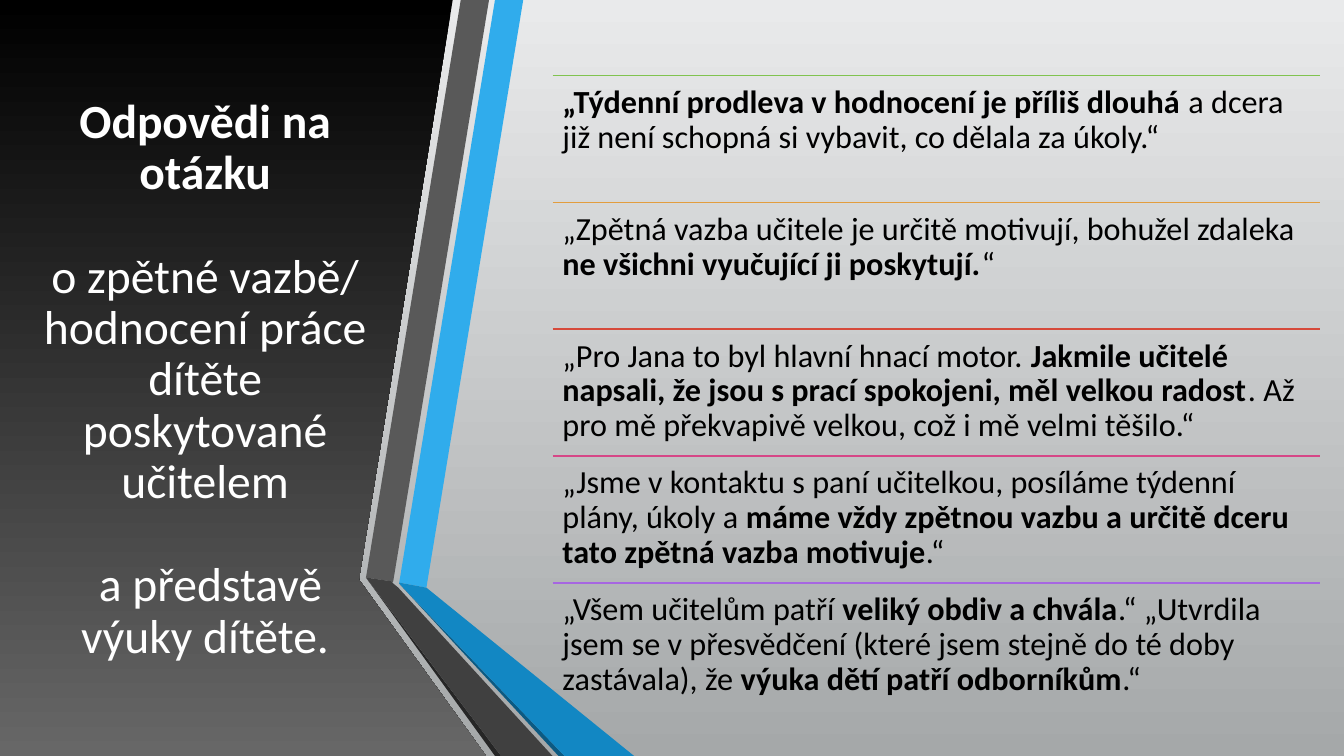
from lxml import etree
from pptx import Presentation
from pptx.dml.color import RGBColor
from pptx.enum.shapes import MSO_CONNECTOR
from pptx.enum.text import MSO_ANCHOR, PP_ALIGN
from pptx.oxml.ns import qn
from pptx.util import Inches, Pt

STRAIGHT = MSO_CONNECTOR.STRAIGHT
TOP, MIDDLE = MSO_ANCHOR.TOP, MSO_ANCHOR.MIDDLE
LEFT, CENTER = PP_ALIGN.LEFT, PP_ALIGN.CENTER

PANEL = [(0, 0), (4.49, 0), (3.56, 5.75), (4.82, 7.5), (0, 7.5)]
RIBBONS = [
    ("30ACEC", [(3.96, 5.78), (4.23, 5.83), (5.19, 0), (4.91, 0)]),
    ("595959", [(4.85, 0), (4.57, 0), (3.63, 5.73), (3.9, 5.77)]),
    ("262626", [(3.63, 5.73), (4.91, 7.5), (4.97, 7.5)]),
    ("0C5A82", [(3.96, 5.79), (5.54, 7.5), (5.6, 7.5)]),
    ("1287C3", [(3.96, 5.79), (5.6, 7.5), (6.29, 7.5), (4.23, 5.83), (3.96, 5.78)]),
    ("404040", [(5.48, 7.5), (3.95, 5.83), (3.89, 5.78), (3.9, 5.77),
                (3.63, 5.73), (4.97, 7.5)]),
]
TITLE = [
    "*Odpovědi na otázku*",
    "o zpětné vazbě/ hodnocení práce dítěte poskytované učitelem",
    " a představě výuky dítěte.",
]
QUOTES = [
    ("80C34F", "*„Týdenní prodleva v hodnocení je příliš dlouhá *a dcera již není "
               "schopná si vybavit, co dělala za úkoly.“"),
    ("E29D3E", "„Zpětná vazba učitele je určitě motivují, bohužel zdaleka "
               "*ne všichni vyučující ji poskytují.*“"),
    ("D64A3B", "„Pro Jana to byl hlavní hnací motor. *Jakmile učitelé napsali, že jsou "
               "s prací spokojeni, měl velkou radost*. Až pro mě překvapivě velkou, "
               "což i mě velmi těšilo.“"),
    ("D64787", "„Jsme v kontaktu s paní učitelkou, posíláme týdenní plány, úkoly a "
               "*máme vždy zpětnou vazbu a určitě dceru tato zpětná vazba motivuje*.“"),
    ("A666E1", "„Všem učitelům patří *veliký obdiv a chvála*.“ „Utvrdila jsem se "
               "v přesvědčení (které jsem stejně do té doby zastávala), že "
               "*výuka dětí patří odborníkům*.“"),
]
QUOTE_LEFT, QUOTE_WIDTH = 5.48, 7.61
QUOTE_TOP, QUOTE_BOTTOM = 0.75, 7.04
QUOTE_STEP = (QUOTE_BOTTOM - QUOTE_TOP) / len(QUOTES)


def rgb(color):
    return RGBColor.from_string(color)


class SlideBuilder:
    """Draws styled elements on one slide."""

    font = "Calibri"

    def __init__(self, slide):
        self.slide = slide
        self.shapes = slide.shapes

    def gradient(self, fill, top, bottom):
        fill.gradient()
        fill.gradient_angle = 270
        for stop, color, position in zip(fill.gradient_stops, (top, bottom), (0, 1)):
            stop.color.rgb = rgb(color)
            stop.position = position

    def background(self, top, bottom):
        self.gradient(self.slide.background.fill, top, bottom)

    def polygon(self, points, *colors):
        corners = [(Inches(x), Inches(y)) for x, y in points]
        builder = self.shapes.build_freeform(*corners[0])
        builder.add_line_segments(corners[1:], close=True)
        sp = builder.convert_to_shape()
        sp.shadow.inherit = False
        sp.line.fill.background()
        if len(colors) == 2:
            self.gradient(sp.fill, *colors)
        else:
            sp.fill.solid()
            sp.fill.fore_color.rgb = rgb(colors[0])

    def rule(self, left, top, width, color):
        line = self.shapes.add_connector(
            STRAIGHT, Inches(left), Inches(top), Inches(left + width), Inches(top))
        line.line.color.rgb = rgb(color)
        line.line.width = Pt(1.25)
        etree.SubElement(line._element.spPr, qn("a:effectLst"))

    def text(self, box, paragraphs, size, color, align=LEFT, anchor=TOP,
             inset=0.1, gap=0):
        sp = self.shapes.add_textbox(*map(Inches, box))
        tf = sp.text_frame
        tf.word_wrap = True
        tf.vertical_anchor = anchor
        tf.margin_left = tf.margin_right = Inches(0.1)
        tf.margin_top = tf.margin_bottom = Inches(inset)
        for i, content in enumerate(paragraphs):
            p = tf.add_paragraph() if i else tf.paragraphs[0]
            p.alignment = align
            p.line_spacing = 0.9
            p.space_before = Pt(gap if i else 0)
            for j, part in enumerate(content.split("*")):
                if part:
                    r = p.add_run()
                    r.text = part
                    r.font.name = self.font
                    r.font.size = Pt(size)
                    r.font.bold = j % 2 == 1
                    r.font.color.rgb = rgb(color)


def main():
    prs = Presentation()
    prs.slide_width, prs.slide_height = Inches(13.33), Inches(7.5)
    s = SlideBuilder(prs.slides.add_slide(prs.slide_layouts[6]))
    s.background("E9EAEB", "A5A8A9")
    s.polygon(PANEL, "000000", "676767")
    s.text((0.33, 0.75, 3.41, 6.05), TITLE, 34, "FFFFFF", CENTER, MIDDLE,
           inset=0.05, gap=37)
    for color, points in RIBBONS:
        s.polygon(points, color)
    for i, (color, quote) in enumerate(QUOTES):
        top = QUOTE_TOP + i * QUOTE_STEP
        s.rule(QUOTE_LEFT, top, QUOTE_WIDTH, color)
        s.text((QUOTE_LEFT, top, QUOTE_WIDTH, QUOTE_STEP), [quote], 23, "000000")
    prs.save("out.pptx")


if __name__ == "__main__":
    main()
